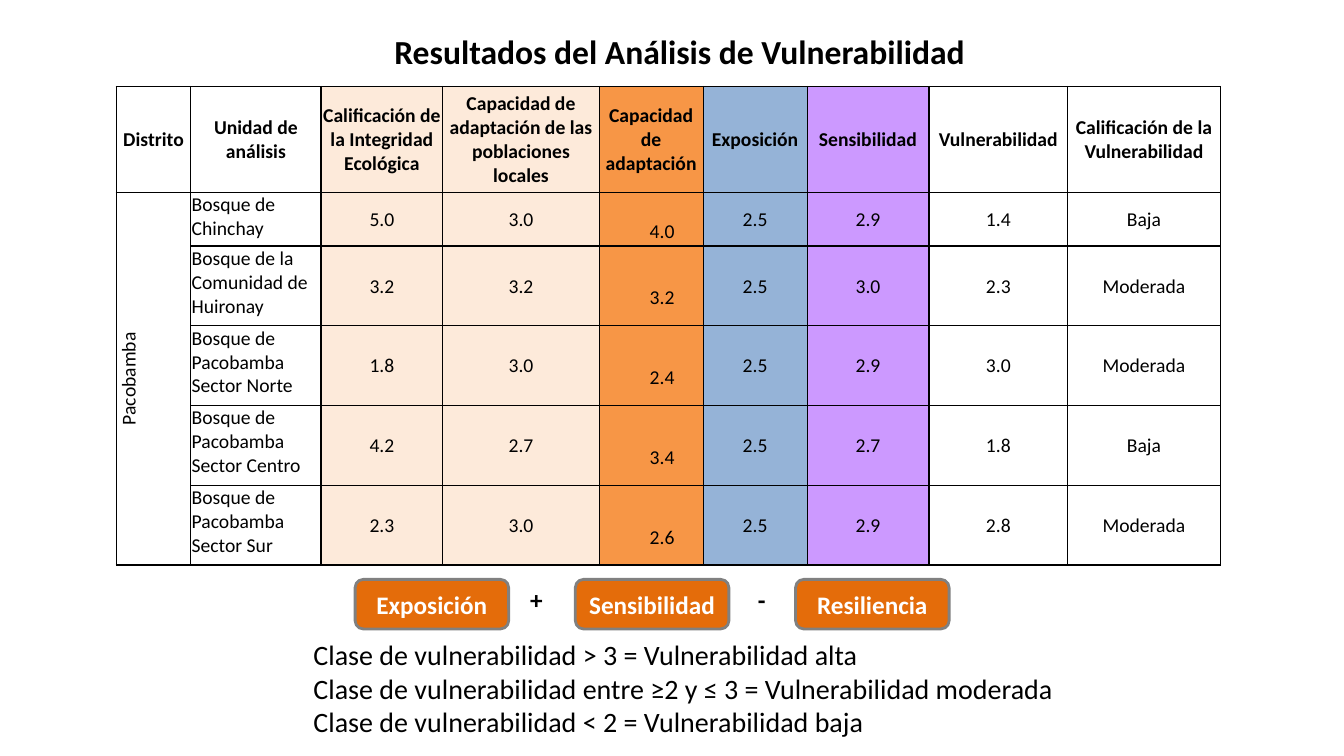
import dataclasses

import lxml.etree
import pptx
import pptx.dml.color
import pptx.enum.shapes
import pptx.enum.text
import pptx.oxml.ns
import pptx.slide
import pptx.util

Cm = pptx.util.Cm
RGBColor = pptx.dml.color.RGBColor
Align = pptx.enum.text.PP_ALIGN
Anchor = pptx.enum.text.MSO_ANCHOR
AutoSize = pptx.enum.text.MSO_AUTO_SIZE

BLACK = RGBColor(0x00, 0x00, 0x00)
WHITE = RGBColor(0xFF, 0xFF, 0xFF)
GRAY = RGBColor(0x80, 0x80, 0x80)
PEACH = RGBColor(0xFD, 0xEA, 0xDA)
ORANGE = RGBColor(0xF7, 0x96, 0x46)
DARK_ORANGE = RGBColor(0xE4, 0x6C, 0x0A)
BLUE = RGBColor(0x95, 0xB3, 0xD7)
PURPLE = RGBColor(0xCC, 0x99, 0xFF)

COLUMNS = [
    ("Distrito", 1.88, None),
    ("Unidad de análisis", 3.28, None),
    ("Calificación de la Integridad Ecológica", 3.07, PEACH),
    ("Capacidad de adaptación de las poblaciones locales", 3.94, PEACH),
    ("Capacidad de adaptación", 2.62, ORANGE),
    ("Exposición", 2.62, BLUE),
    ("Sensibilidad", 3.07, PURPLE),
    ("Vulnerabilidad", 3.5, None),
    ("Calificación de la Vulnerabilidad", 3.84, None),
]
ROW_HEIGHTS = [2.67, 1.35, 2.01, 2.01, 2.01, 2.01]
FORESTS = [
    ["Pacobamba", "Bosque de Chinchay", "5.0", "3.0", "4.0", "2.5", "2.9", "1.4", "Baja"],
    ["", "Bosque de la Comunidad de Huironay", "3.2", "3.2", "3.2", "2.5", "3.0", "2.3", "Moderada"],
    ["", "Bosque de Pacobamba Sector Norte", "1.8", "3.0", "2.4", "2.5", "2.9", "3.0", "Moderada"],
    ["", "Bosque de Pacobamba Sector Centro", "4.2", "2.7", "3.4", "2.5", "2.7", "1.8", "Baja"],
    ["", "Bosque de Pacobamba Sector Sur", "2.3", "3.0", "2.6", "2.5", "2.9", "2.8", "Moderada"],
]
UNIT_COLUMN = 1
CAPACITY_COLUMN = 4
CLASSES = [
    "Clase de vulnerabilidad > 3 = Vulnerabilidad alta",
    "Clase de vulnerabilidad entre ≥2 y ≤ 3 = Vulnerabilidad moderada",
    "Clase de vulnerabilidad < 2 = Vulnerabilidad baja",
]


def apply(target, values):
    """Set every attribute of the target from a dict of values."""
    for name, value in values.items():
        setattr(target, name, value)


@dataclasses.dataclass
class SlideBuilder:
    """Draw styled elements on the current slide."""

    slide: pptx.slide.Slide
    font_name: str = "Calibri"

    def paragraphs(self, frame, lines, size, color=BLACK, bold=False, align=Align.LEFT):
        """Fill a text frame with one paragraph per line."""
        for index, line in enumerate(lines):
            paragraph = frame.add_paragraph() if index else frame.paragraphs[0]
            paragraph.alignment = align
            run = paragraph.add_run()
            run.text = line
            apply(run.font, {"name": self.font_name, "size": pptx.util.Pt(size), "bold": bold})
            run.font.color.rgb = color

    def title(self, text, box):
        """Place and format the title placeholder."""
        shape = self.slide.shapes.title
        apply(shape, dict(zip(("left", "top", "width", "height"), map(Cm, box))))
        apply(shape.text_frame, {"vertical_anchor": Anchor.TOP, "auto_size": AutoSize.NONE})
        self.paragraphs(shape.text_frame, [text], 24, bold=True, align=Align.CENTER)

    def text(self, lines, box, size, anchor=Anchor.TOP, **style):
        """Add a wrapping text box."""
        frame = self.slide.shapes.add_textbox(*map(Cm, box)).text_frame
        apply(frame, {"word_wrap": True, "vertical_anchor": anchor})
        self.paragraphs(frame, lines, size, **style)

    def button(self, text, box):
        """Add a rounded rectangle with a centred label."""
        kind = pptx.enum.shapes.MSO_SHAPE.ROUNDED_RECTANGLE
        shape = self.slide.shapes.add_shape(kind, *map(Cm, box))
        shape.shadow.inherit = False
        shape.fill.solid()
        shape.fill.fore_color.rgb = DARK_ORANGE
        shape.line.color.rgb = GRAY
        shape.line.width = pptx.util.Pt(2)
        apply(shape.text_frame, {"word_wrap": True, "vertical_anchor": Anchor.MIDDLE})
        self.paragraphs(shape.text_frame, [text], 18, WHITE, True, Align.CENTER)

    def border(self, cell):
        """Give a cell thin black lines on its four sides."""
        properties = cell._tc.get_or_add_tcPr()
        qn = pptx.oxml.ns.qn
        for index, side in enumerate(("a:lnL", "a:lnR", "a:lnT", "a:lnB")):
            line = lxml.etree.Element(qn(side), w=str(pptx.util.Pt(1)))
            fill = lxml.etree.SubElement(line, qn("a:solidFill"))
            lxml.etree.SubElement(fill, qn("a:srgbClr"), val=str(BLACK))
            properties.insert(index, line)

    def cell(self, cell, text, fill, bold, align, **layout):
        """Fill and format one table cell."""
        margins = {"margin_left": Cm(0.02), "margin_right": Cm(0.02),
                   "margin_top": Cm(0.02), "margin_bottom": 0}
        apply(cell, {**margins, "vertical_anchor": Anchor.MIDDLE, **layout})
        if fill is None:
            cell.fill.background()
        else:
            cell.fill.solid()
            cell.fill.fore_color.rgb = fill
        self.border(cell)
        if text:
            self.paragraphs(cell.text_frame, [text], 14, bold=bold, align=align)

    def table(self, left, top):
        """Add the table of results by forest."""
        rows = [[heading for heading, _, _ in COLUMNS], *FORESTS]
        widths = [width for _, width, _ in COLUMNS]
        box = (left, top, sum(widths), sum(ROW_HEIGHTS))
        table = self.slide.shapes.add_table(len(rows), len(COLUMNS), *map(Cm, box)).table
        apply(table, {"first_row": False, "horz_banding": False})
        for column, width in zip(table.columns, widths):
            column.width = Cm(width)
        for row, height in zip(table.rows, ROW_HEIGHTS):
            row.height = Cm(height)
        body_layouts = {
            UNIT_COLUMN: (Align.LEFT, {"vertical_anchor": Anchor.TOP}),
            CAPACITY_COLUMN: (Align.RIGHT, {"margin_top": Cm(0.62), "margin_right": Cm(0.72)}),
        }
        for row_index, row in enumerate(rows):
            for column_index, text in enumerate(row):
                align, layout = Align.CENTER, {}
                if row_index:
                    align, layout = body_layouts.get(column_index, (align, layout))
                self.cell(table.cell(row_index, column_index), text,
                          COLUMNS[column_index][2], row_index == 0, align, **layout)
        district = table.cell(1, 0)
        district.merge(table.cell(len(FORESTS), 0))
        district._tc.get_or_add_tcPr().set("vert", "vert270")


def main():
    """Build and save the presentation."""
    presentation = pptx.Presentation()
    apply(presentation, {"slide_width": Cm(33.87), "slide_height": Cm(19.05)})
    builder = SlideBuilder(presentation.slides.add_slide(presentation.slide_layouts[5]))
    builder.table(2.93, 2.18)
    builder.title("Resultados del Análisis de Vulnerabilidad", (6.83, 0.64, 20.6, 1.27))
    for index, factor in enumerate(("Exposición", "Sensibilidad", "Resiliencia")):
        builder.button(factor, (8.95 + 5.55 * index, 14.6, 3.87, 1.25))
    for index, sign in enumerate("+-"):
        builder.text([sign], (13.11 + 5.74 * index, 14.6, 1, 1.02), 18, bold=True)
    builder.text(CLASSES, (7.65, 15.93, 19.8, 2.82), 20, Anchor.MIDDLE, align=Align.JUSTIFY)
    presentation.save("out.pptx")


if __name__ == "__main__":
    main()
